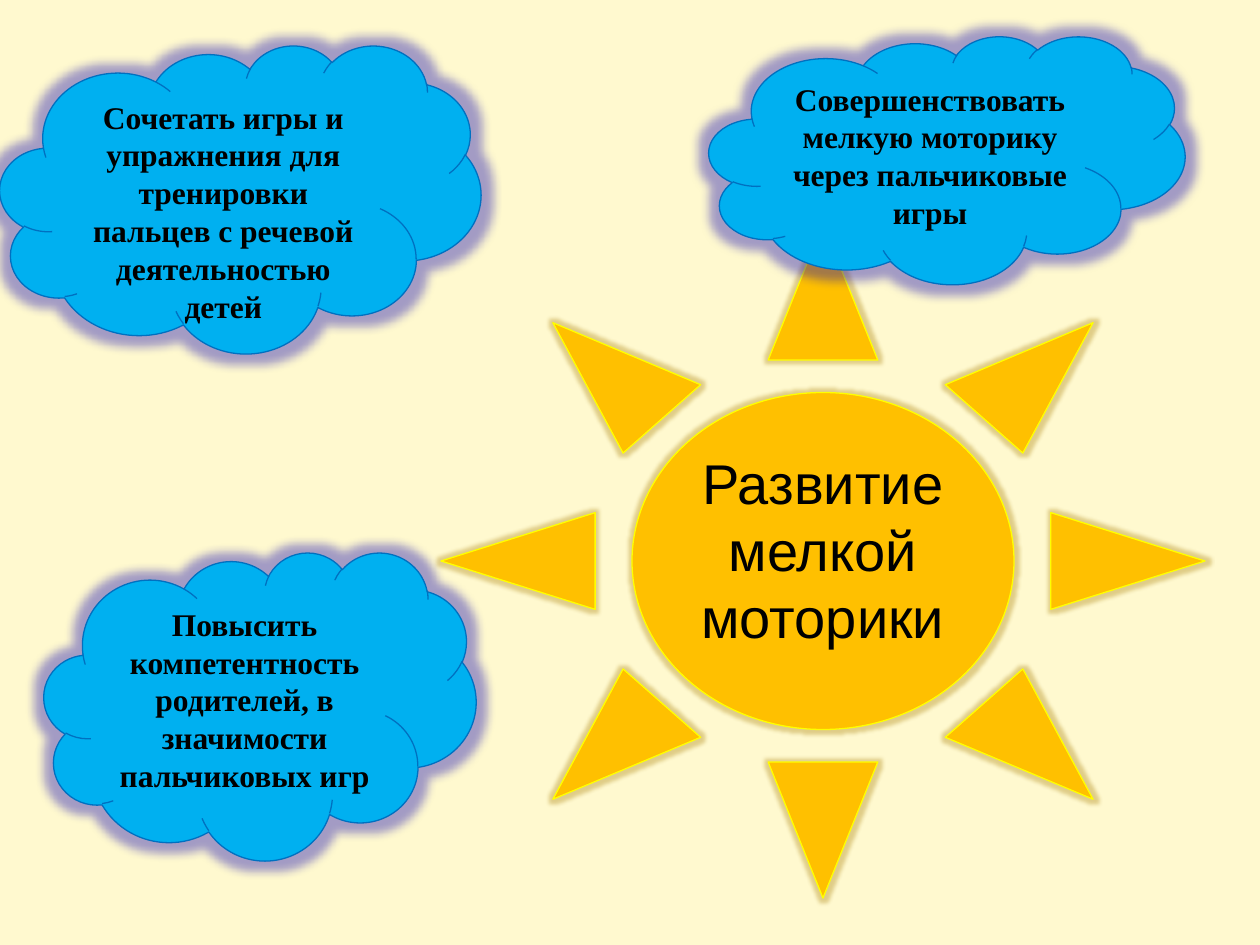
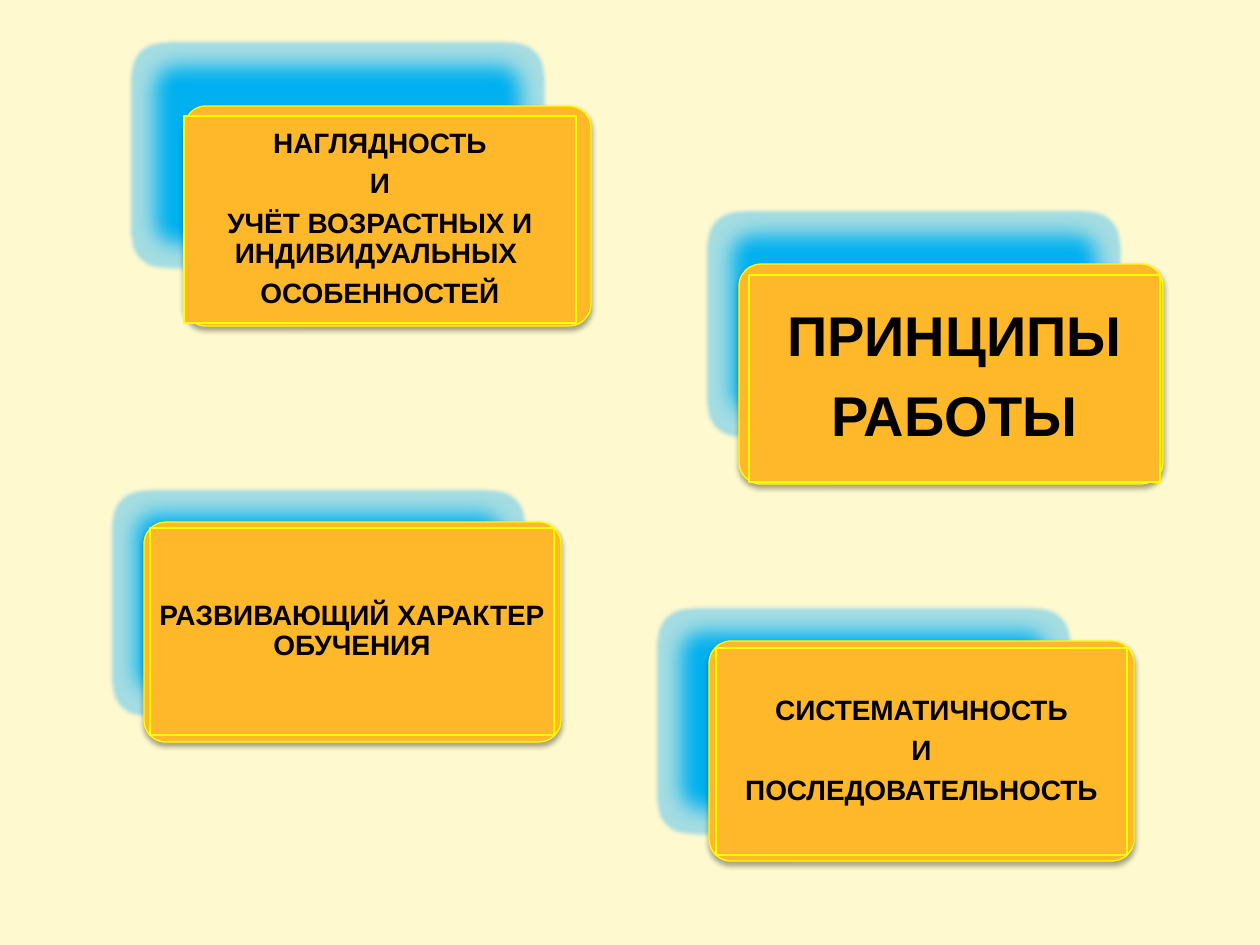
from lxml import etree
from pptx import Presentation
from pptx.dml.color import RGBColor
from pptx.enum.shapes import MSO_SHAPE
from pptx.enum.text import MSO_ANCHOR, PP_ALIGN
from pptx.oxml import parse_xml
from pptx.util import Emu, Pt

SUN, CLOUD = MSO_SHAPE.SUN, MSO_SHAPE.CLOUD
ROUNDED, RECTANGLE = MSO_SHAPE.ROUNDED_RECTANGLE, MSO_SHAPE.RECTANGLE
TOP, MIDDLE, CENTER = MSO_ANCHOR.TOP, MSO_ANCHOR.MIDDLE, PP_ALIGN.CENTER
NAMESPACE = "http://schemas.openxmlformats.org/drawingml/2006/main"
PX = 914400 / 126

COLORS = {
    "page": "FFF9CF", "text": "000000",
    "sun": "FFC000", "card": "FFB829", "yellow line": "FFFF00",
    "blue": "00B0F0", "blue line": "0070C0",
    "cloud glow": "190FB4", "sun glow": "B18B1B", "blue glow": "1EB4FF",
}
GLOW = '<a:glow rad="{}"><a:srgbClr val="{}"><a:alpha val="40000"/></a:srgbClr></a:glow>'
SUN_GLOW = GLOW.format(Pt(5), COLORS["sun glow"])
CLOUD_GLOW = GLOW.format(Pt(11), COLORS["cloud glow"])
BLUE_GLOW = GLOW.format(Pt(5), COLORS["blue glow"]) + f'<a:softEdge rad="{Pt(12.5)}"/>'
CARD_SHADOW = ('<a:outerShdw blurRad="40000" dist="23000" dir="5400000" rotWithShape="0">'
               '<a:srgbClr val="000000"><a:alpha val="35000"/></a:srgbClr></a:outerShdw>')


def add_figure(page, kind, place, fill, line=None, effects=""):
    """Add a filled preset shape at a place in px, with effects given as XML."""
    shape = page.shapes.add_shape(kind, *[Emu(round(length * PX)) for length in place])
    shape.fill.solid()
    shape.fill.fore_color.rgb = RGBColor.from_string(COLORS[fill])
    if line:
        shape.line.color.rgb = RGBColor.from_string(COLORS[line])
        shape.line.width = Pt(0.75)
    else:
        shape.line.fill.background()
    shape.shadow.inherit = False
    if effects:
        effect_list = shape._element.spPr.find(f"{{{NAMESPACE}}}effectLst")
        for effect in parse_xml(f'<a:root xmlns:a="{NAMESPACE}">{effects}</a:root>'):
            effect_list.append(effect)
        etree.cleanup_namespaces(effect_list)
    return shape


def write(shape, lines, anchor, font, spacing=None):
    frame = shape.text_frame
    frame.word_wrap = True
    frame.vertical_anchor = anchor
    for number, line in enumerate(lines):
        paragraph = frame.add_paragraph() if number else frame.paragraphs[0]
        paragraph.alignment = CENTER
        for name, value in (spacing or {}).items():
            setattr(paragraph, name, value)
        span = paragraph.add_run()
        span.text = line
        for name, value in font.items():
            setattr(span.font, name, value)
        span.font.color.rgb = RGBColor.from_string(COLORS["text"])


deck = Presentation()
deck.slide_width, deck.slide_height = Emu(round(1260 * PX)), Emu(round(945 * PX))
background = deck.slide_master.background.fill
background.solid()
background.fore_color.rgb = RGBColor.from_string(COLORS["page"])
blank = deck.slide_layouts[6]

# Slide 1: the sun and its clouds
page = deck.slides.add_slide(blank)
sun = add_figure(page, SUN, (441, 224, 764, 674), "sun", "yellow line", SUN_GLOW)
write(sun, ["Развитие мелкой моторики"], TOP, {"name": "Arial", "size": Pt(32)})

clouds = [
    ((0, 45, 481, 308),
     "Сочетать игры и упражнения для тренировки пальцев с речевой деятельностью детей"),
    ((44, 552, 432, 308), "Повысить компетентность родителей, в значимости пальчиковых игр"),
    ((709, 36, 476, 248), "Совершенствовать мелкую моторику через пальчиковые игры"),
]
cloud_font = {"name": "Times New Roman", "size": Pt(18), "bold": True}
for place, aim in clouds:
    cloud = add_figure(page, CLOUD, place, "blue", "blue line", CLOUD_GLOW)
    write(cloud, [aim], TOP, cloud_font)

# Slide 2: the principles; each has a blue back, a card and a text panel
page = deck.slides.add_slide(blank)
CARD_HEIGHT, PANEL_HEIGHT = 220, 207
BACK_WIDTH = 407
principles = [
    # back left and top; card left, top and width; panel left, top and width; size; inset
    ((660, 611), (709, 641, 425), (716, 648, 411), 16, 9,
     ["СИСТЕМАТИЧНОСТЬ", "И", "ПОСЛЕДОВАТЕЛЬНОСТЬ"]),
    ((115, 493), (144, 522, 417), (150, 528, 404), 16, 9, ["РАЗВИВАЮЩИЙ ХАРАКТЕР ОБУЧЕНИЯ"]),
    ((710, 214), (739, 264, 424), (749, 275, 411), 32, 16, ["ПРИНЦИПЫ", "РАБОТЫ"]),
    ((134, 45), (184, 106, 407), (184, 116, 392), 16, 9,
     ["НАГЛЯДНОСТЬ", "И", "УЧЁТ ВОЗРАСТНЫХ И ИНДИВИДУАЛЬНЫХ ", "ОСОБЕННОСТЕЙ"]),
]
for back_place, card_place, panel_place, size, inset, lines in principles:
    back = add_figure(page, ROUNDED, (*back_place, BACK_WIDTH, CARD_HEIGHT), "blue",
                      effects=BLUE_GLOW)
    card = add_figure(page, ROUNDED, (*card_place, CARD_HEIGHT), "card", "yellow line",
                      CARD_SHADOW)
    for box in (back, card):
        box.adjustments[0] = 0.1
    panel = add_figure(page, RECTANGLE, (*panel_place, PANEL_HEIGHT), "card", "yellow line")
    for side in ("left", "top", "right", "bottom"):
        setattr(panel.text_frame, f"margin_{side}", Emu(round(inset * PX)))
    write(panel, lines, MIDDLE, {"name": "Arial", "size": Pt(size), "bold": True},
          {"line_spacing": 0.9, "space_after": Pt(0.35 * size)})

deck.save("out.pptx")
